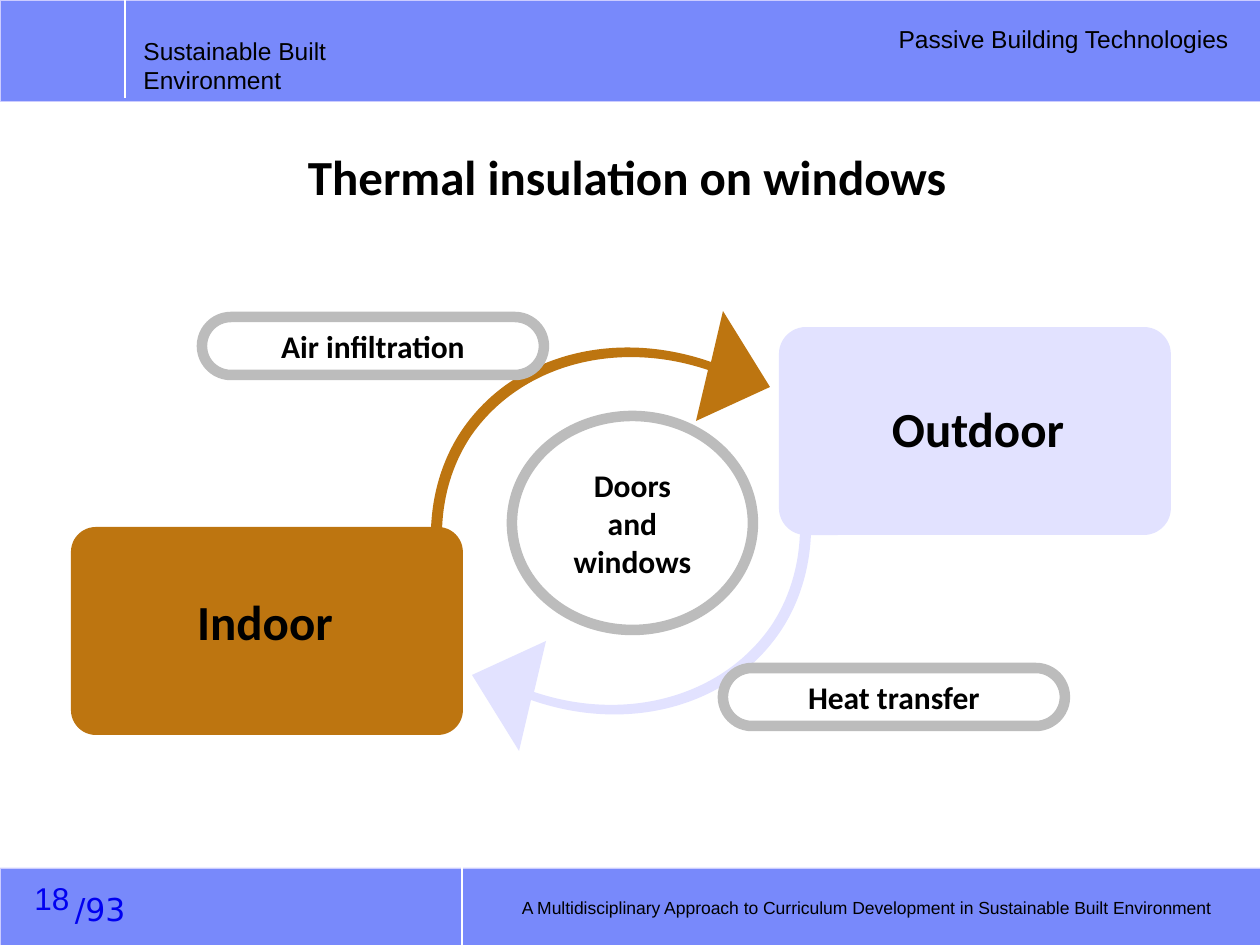
from dataclasses import dataclass
from math import cos, radians, sin

from lxml.etree import SubElement
from pptx import Presentation
from pptx.dml.color import RGBColor
from pptx.enum.shapes import MSO_CONNECTOR, MSO_SHAPE
from pptx.enum.text import MSO_ANCHOR, PP_ALIGN
from pptx.oxml.ns import qn
from pptx.util import Pt

PX = 914400 // 126  # EMU in one px
SLIDE_W, SLIDE_H = 1260, 945


@dataclass(frozen=True)
class Theme:
    band: str = "7889FB"
    band_edge: str = "CCCCFF"
    white: str = "FFFFFF"
    ink: str = "000000"
    page: str = "0000F0"
    indoor: str = "BD7510"
    outdoor: str = "E2E2FF"
    ring: str = "BCBCBC"
    heading: int = 28
    label: int = 18
    header: int = 14
    footer: int = 10
    body_font: str = "Calibri"
    frame_font: str = "Arial"
    total_font: str = "DejaVu Sans"


THEME = Theme()

# Arrow from indoor to outdoor: one point is a line, three points a Bezier curve
ARROW_PATH = [
    [(708, 370)],
    [(616, 339), (520, 365), (471, 436)],
    [(451, 466), (441, 502), (442, 542)],
    [(431, 541)],
    [(430, 500), (441, 461), (462, 430)],
    [(513, 355), (614, 328), (711, 362)],
    [(723, 311)],
    [(770, 387)],
    [(696, 421)],
]
ARROW_SIZE = (411, 476)
ARROW_CENTRE = (659, 563)
ARROW_TURN = 304.3


def px(*lengths):
    return [round(length * PX) for length in lengths]


def rgb(value):
    return RGBColor.from_string(value)


def write(shape, text, size, font=THEME.body_font, color=THEME.ink, bold=False,
          align=PP_ALIGN.LEFT, anchor=MSO_ANCHOR.TOP, spacing=None, inset_top=6):
    frame = shape.text_frame
    frame.word_wrap = True
    frame.vertical_anchor = anchor
    frame.margin_top = inset_top * PX
    frame.text = text
    for paragraph in frame.paragraphs:
        paragraph.alignment = align
        paragraph.line_spacing = spacing
        for run in paragraph.runs:
            run.font.name = font
            run.font.size = Pt(size)
            run.font.bold = bold
            run.font.color.rgb = rgb(color)


def add_text(slide, box, text, size, **style):
    write(slide.shapes.add_textbox(*px(*box)), text, size, **style)


def paint(shape, fill=None, line=None, width=0):
    shape.shadow.inherit = False
    if fill:
        shape.fill.solid()
        shape.fill.fore_color.rgb = rgb(fill)
    else:
        shape.fill.background()
    if line:
        shape.line.color.rgb = rgb(line)
        shape.line.width = Pt(width)
    else:
        shape.line.fill.background()


def add_band(slide, top, height):
    band = slide.shapes.add_shape(MSO_SHAPE.RECTANGLE, *px(0, top, SLIDE_W, height))
    paint(band, THEME.band, THEME.band_edge, 0.25)


def add_divider(slide, x, top, bottom):
    divider = slide.shapes.add_connector(MSO_CONNECTOR.STRAIGHT, *px(x, top, x, bottom))
    divider.line.color.rgb = rgb(THEME.white)
    divider.line.width = Pt(0.75)
    SubElement(divider._element.spPr, qn("a:effectLst"))


def add_place(slide, left, top, corner, fill):
    place = slide.shapes.add_shape(MSO_SHAPE.ROUNDED_RECTANGLE, *px(left, top, 392, 208))
    place.adjustments[0] = corner
    paint(place, fill)


def add_ringed(slide, kind, box, text, fill=None):
    ringed = slide.shapes.add_shape(kind, *px(*box))
    if kind == MSO_SHAPE.ROUNDED_RECTANGLE:
        ringed.adjustments[0] = 0.5
    paint(ringed, fill, THEME.ring, 6)
    write(ringed, text, THEME.label, bold=True, align=PP_ALIGN.CENTER,
          anchor=MSO_ANCHOR.MIDDLE)


def in_arrow_frame(point):
    """Turn a point on the slide back into the arrow's unrotated frame."""
    dx, dy = (value - centre for value, centre in zip(point, ARROW_CENTRE))
    c, s = cos(radians(ARROW_TURN)), sin(radians(ARROW_TURN))
    width, height = ARROW_SIZE
    return px(dx * c + dy * s + width / 2, dy * c - dx * s + height / 2)


def add_arrow(slide, centre, turn, fill):
    segments = [[in_arrow_frame(point) for point in segment] for segment in ARROW_PATH]
    ends = [segment[-1] for segment in segments]
    builder = slide.shapes.build_freeform(*ends[0], scale=1.0)
    builder.add_line_segments(ends[1:], close=True)
    arrow = builder.convert_to_shape()

    # Seat the outline in its frame, with curves where there are control points
    width, height = ARROW_SIZE
    arrow.left, arrow.top = px(centre[0] - width / 2, centre[1] - height / 2)
    arrow.width, arrow.height = px(width, height)
    arrow.rotation = turn
    outline = next(arrow._element.iter(qn("a:path")))
    for axis, length in zip("wh", px(width, height)):
        outline.set(axis, str(length))
    for step, segment in zip(list(outline), segments):
        if len(segment) == 3:
            curve = SubElement(outline, qn("a:cubicBezTo"))
            outline.replace(step, curve)
            step = curve
        for old in list(step):
            step.remove(old)
        for x, y in segment:
            SubElement(step, qn("a:pt"), x=str(x), y=str(y))
    paint(arrow, fill)


def add_frame(slide):
    frame_text = dict(font=THEME.frame_font)
    add_band(slide, 868, 77)
    add_band(slide, 0, 101)
    add_divider(slide, 125, 0, 98)
    add_text(slide, (131, 30, 348, 42), "Sustainable Built Environment",
             THEME.header, **frame_text)
    add_divider(slide, 462, 867, SLIDE_H)
    add_text(slide, (882, 18, 359, 54), "Passive Building Technologies",
             THEME.header, align=PP_ALIGN.RIGHT, **frame_text)
    add_text(slide, (35, 884, 103, 50), "/93", THEME.label, font=THEME.total_font,
             color=THEME.page, align=PP_ALIGN.RIGHT)


def add_cycle(slide):
    # Places and the exchange between them
    add_place(slide, 71, 527, 0.12, THEME.indoor)
    add_arrow(slide, ARROW_CENTRE, ARROW_TURN, THEME.indoor)
    add_place(slide, 779, 327, 0.13, THEME.outdoor)
    add_arrow(slide, (583, 499), ARROW_TURN - 180, THEME.outdoor)

    # What lies between, and what passes through
    add_ringed(slide, MSO_SHAPE.OVAL, (512, 416, 241, 214), "Doors\nand\nwindows",
               THEME.white)
    for left, top, flow in ((202, 317, "Air infiltration"), (723, 668, "Heat transfer")):
        add_ringed(slide, MSO_SHAPE.ROUNDED_RECTANGLE, (left, top, 342, 58), flow)

    # Place names
    for left, top, name in ((125, 585, "Indoor"), (838, 393, "Outdoor")):
        add_text(slide, (left, top, 280, 72), name, THEME.heading, bold=True,
                 align=PP_ALIGN.CENTER)


def add_footer(slide):
    add_text(slide, (494, 891, 729, 34),
             "A Multidisciplinary Approach to Curriculum Development in "
             "Sustainable Built Environment",
             THEME.footer, font=THEME.frame_font, align=PP_ALIGN.RIGHT,
             anchor=MSO_ANCHOR.MIDDLE)
    add_text(slide, (22, 873, 294, 50), "18", THEME.label, font=THEME.frame_font,
             color=THEME.page, anchor=MSO_ANCHOR.MIDDLE)


def main():
    deck = Presentation()
    deck.slide_width, deck.slide_height = px(SLIDE_W, SLIDE_H)
    slide = deck.slides.add_slide(deck.slide_layouts[6])
    add_frame(slide)
    add_text(slide, (24, 121, 1206, 108), "Thermal insulation on windows",
             THEME.heading, bold=True, align=PP_ALIGN.CENTER,
             anchor=MSO_ANCHOR.MIDDLE, spacing=0.9, inset_top=16)
    add_cycle(slide)
    add_footer(slide)
    deck.save("out.pptx")


if __name__ == "__main__":
    main()
